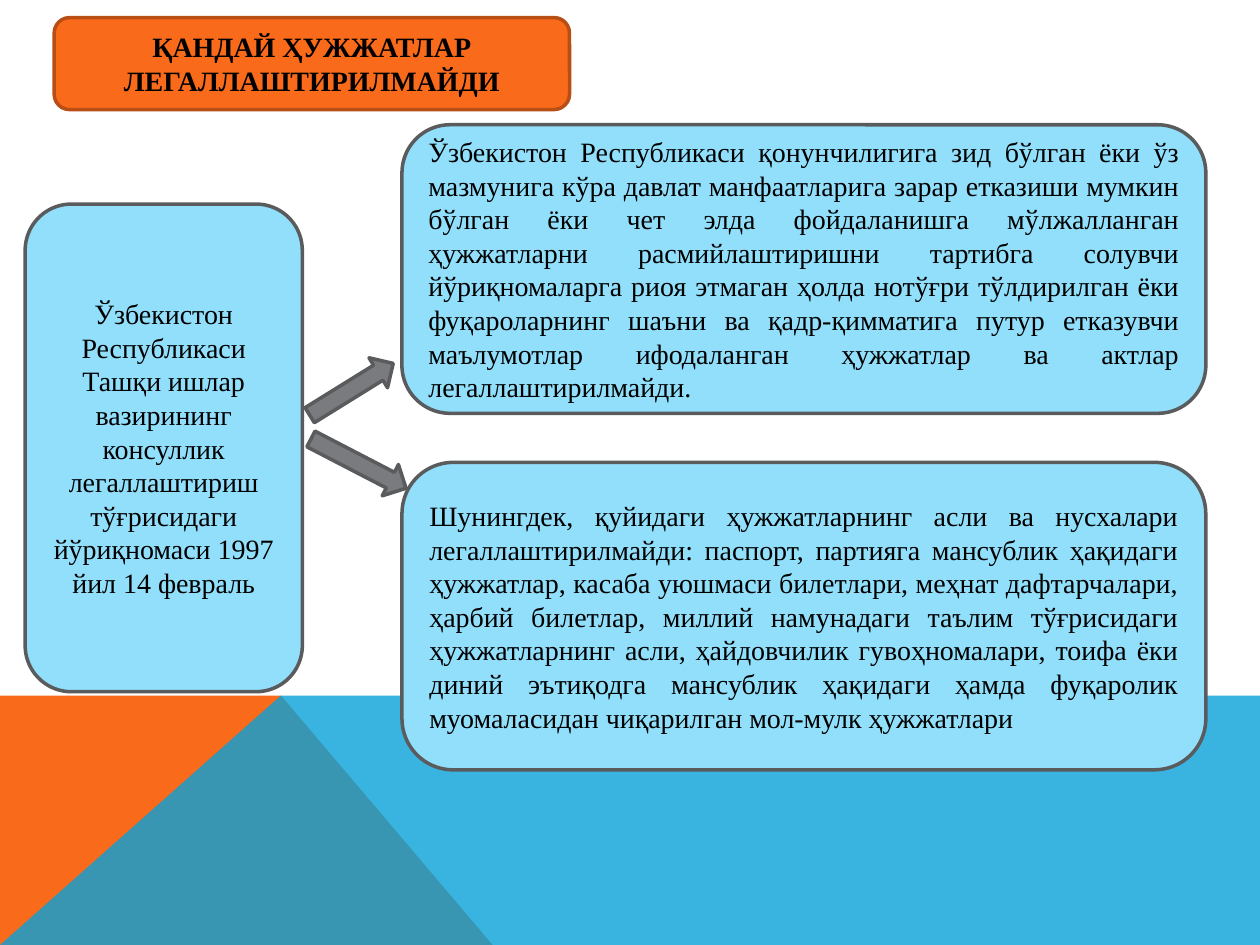
from lxml.etree import SubElement
from pptx import Presentation
from pptx.dml.color import RGBColor
from pptx.enum.shapes import MSO_SHAPE
from pptx.enum.text import MSO_ANCHOR, PP_ALIGN
from pptx.oxml.ns import qn
from pptx.util import Inches, Pt

ORANGE = RGBColor(0xF9, 0x6A, 0x1B)
DARK_ORANGE = RGBColor(0xB8, 0x4E, 0x14)
BLUE = RGBColor(0x08, 0xA1, 0xD9)
PALE_BLUE = RGBColor(0x91, 0xDF, 0xFB)
GRAY = RGBColor(0x79, 0x7B, 0x7E)
DARK_GRAY = RGBColor(0x5A, 0x5B, 0x5D)
BLACK = RGBColor(0, 0, 0)

deck = Presentation()
deck.slide_width = Inches(10)
deck.slide_height = Inches(7.5)
column = deck.slide_width // 100
row = deck.slide_height // 75
page = deck.slides.add_slide(deck.slide_layouts[6])


def add_figure(preset, left, top, width, height, fill, line):
    figure = page.shapes.add_shape(
        preset, int(left * column), int(top * row), int(width * column), int(height * row)
    )
    figure.shadow.inherit = False
    figure.fill.solid()
    figure.fill.fore_color.rgb = fill
    figure.line.color.rgb = line
    figure.line.width = Pt(2)
    return figure


def add_box(left, top, width, height, text, align, fill=PALE_BLUE, line=DARK_GRAY, bold=False):
    box = add_figure(MSO_SHAPE.ROUNDED_RECTANGLE, left, top, width, height, fill, line)
    frame = box.text_frame
    frame.word_wrap = True
    frame.vertical_anchor = MSO_ANCHOR.MIDDLE
    para = frame.paragraphs[0]
    para.alignment = align
    span = para.add_run()
    span.text = text
    span.font.name = "Times New Roman"
    span.font.size = Pt(16)
    span.font.bold = bold
    span.font.color.rgb = BLACK


horizon, peak, foot = 55.2, 22.3, 39.1
bands = [
    ([(0, 75), (0, horizon), (peak, horizon), (foot, 75)], ORANGE, 100),
    ([(0, 75), (peak, horizon), (100, horizon), (100, 75)], BLUE, 80),
]
for corners, color, opacity in bands:
    points = [(int(x * column), int(y * row)) for x, y in corners]
    outline = page.shapes.build_freeform(*points[0])
    outline.add_line_segments(points[1:], close=True)
    band = outline.convert_to_shape()
    band.shadow.inherit = False
    band.fill.solid()
    band.fill.fore_color.rgb = color
    band.line.fill.background()
    if opacity < 100:
        tint = band.fill._xPr.find(qn("a:solidFill"))[0]
        SubElement(tint, qn("a:alpha")).set("val", str(opacity * 1000))

rules = [
    (9.9, 22.9, "Ўзбекистон Республикаси қонунчилигига зид бўлган ёки ўз мазмунига кўра давлат "
     "манфаатларига зарар етказиши мумкин бўлган ёки чет элда фойдаланишга мўлжалланган "
     "ҳужжатларни расмийлаштиришни тартибга солувчи йўриқномаларга риоя этмаган ҳолда "
     "нотўғри тўлдирилган ёки фуқароларнинг шаъни ва қадр-қимматига путур етказувчи "
     "маълумотлар ифодаланган ҳужжатлар ва актлар легаллаштирилмайди."),
    (36.7, 24.4, "Шунингдек, қуйидаги ҳужжатларнинг асли ва нусхалари легаллаштирилмайди: "
     "паспорт, партияга мансублик ҳақидаги ҳужжатлар, касаба уюшмаси билетлари, меҳнат "
     "дафтарчалари, ҳарбий билетлар, миллий намунадаги таълим тўғрисидаги ҳужжатларнинг "
     "асли, ҳайдовчилик гувоҳномалари, тоифа ёки диний эътиқодга мансублик ҳақидаги ҳамда "
     "фуқаролик муомаласидан чиқарилган мол-мулк ҳужжатлари "),
]
for top, height, text in rules:
    add_box(31.9, top, 63.8, height, text, PP_ALIGN.JUSTIFY)

add_box(2, 16.2, 22, 38.7,
        "Ўзбекистон Республикаси Ташқи ишлар вазирининг консуллик легаллаштириш "
        "тўғрисидаги йўриқномаси 1997 йил 14 февраль", PP_ALIGN.CENTER)

for left, top, width, angle in [(24, 29.5, 7.8, 328.2), (24.2, 35.4, 8.5, 27.4)]:
    arrow = add_figure(MSO_SHAPE.RIGHT_ARROW, left, top, width, 2.8, GRAY, DARK_GRAY)
    arrow.rotation = angle

add_box(4.3, 1.4, 40.9, 7.3, "ҚАНДАЙ ҲУЖЖАТЛАР ЛЕГАЛЛАШТИРИЛМАЙДИ",
        PP_ALIGN.CENTER, ORANGE, DARK_ORANGE, True)

deck.save("out.pptx")
